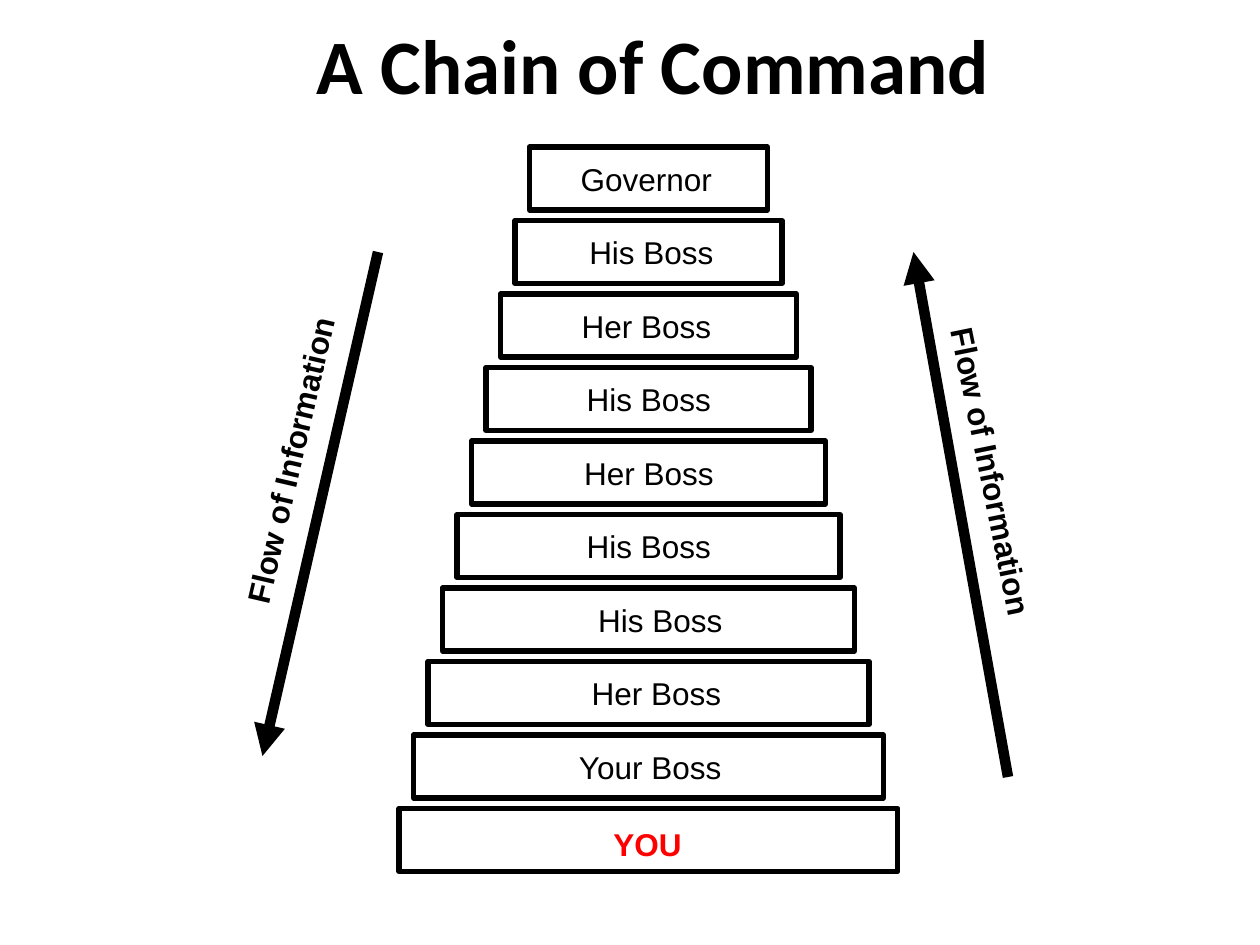
from lxml import etree
from pptx import Presentation
from pptx.dml.color import RGBColor
from pptx.enum.shapes import MSO_CONNECTOR, MSO_SHAPE
from pptx.enum.text import MSO_ANCHOR, PP_ALIGN
from pptx.oxml.ns import qn
from pptx.util import Inches, Pt

RECT = MSO_SHAPE.RECTANGLE
STRAIGHT = MSO_CONNECTOR.STRAIGHT
CENTER = PP_ALIGN.CENTER
MIDDLE = MSO_ANCHOR.MIDDLE

BLACK = RGBColor(0x00, 0x00, 0x00)
RED = RGBColor(0xFF, 0x00, 0x00)

SLIDE_W, SLIDE_H = 10, 7.5
UNIT = SLIDE_W / 120
TEXT_H = 0.4

LEVELS = [
    ("Governor", 1.24, 5.13),
    ("His Boss", 1.2, 5.17),
    ("Her Boss", 1.24, 5.13),
    ("His Boss", 1.2, 5.15),
    ("Her Boss", 1.24, 5.15),
    ("His Boss", 1.2, 5.15),
    ("His Boss", 1.2, 5.24),
    ("Her Boss", 1.24, 5.21),
    ("Your Boss", 1.34, 5.16),
    ("YOU", 0.74, 5.14),
]


def add_text(slide, box, text, size=18, font="Arial", color=BLACK, bold=False, wrap=False):
    sp = slide.shapes.add_textbox(*map(Inches, box))
    tf = sp.text_frame
    tf.word_wrap = wrap
    tf.vertical_anchor = MIDDLE
    p = tf.paragraphs[0]
    p.text = text
    p.alignment = CENTER
    r = p.runs[0]
    r.font.name = font
    r.font.size = Pt(size)
    r.font.bold = bold
    r.font.color.rgb = color
    return sp


def add_title(slide, box):
    add_text(slide, box, "A Chain of Command", 44, "Calibri", bold=True, wrap=True)


def add_pyramid(slide, box):
    left, top, width, height = box
    last = len(LEVELS) - 1
    bar_h = 6 * UNIT
    pitch = (height - bar_h) / last
    step = 0.23
    for i, (label, text_w, text_x) in enumerate(LEVELS):
        bar_w = width - (last - i) * step
        y = top + i * pitch
        bar_box = (left + (width - bar_w) / 2, y, bar_w, bar_h)
        bar = slide.shapes.add_shape(RECT, *map(Inches, bar_box))
        bar.shadow.inherit = False
        bar.fill.background()
        bar.line.color.rgb = BLACK
        bar.line.width = Pt(3)
        is_you = i == last
        text_y = y + (0.08 if is_you else 0.05)
        add_text(slide, (text_x - text_w / 2, text_y, text_w, TEXT_H), label,
                 color=RED if is_you else BLACK, bold=is_you)


def add_flow(slide, start, end, text_center, angle):
    line = slide.shapes.add_connector(STRAIGHT, *map(Inches, start + end))
    line.line.color.rgb = BLACK
    line.line.width = Pt(6)
    ln = line.line._get_or_add_ln()
    etree.SubElement(ln, qn("a:tailEnd"), type="triangle")
    etree.SubElement(line._element.spPr, qn("a:effectLst"))

    text_w = 2.52
    x, y = text_center
    sp = add_text(slide, (x - text_w / 2, y - TEXT_H / 2, text_w, TEXT_H),
                  "Flow of Information", bold=True)
    sp.rotation = angle


def main():
    prs = Presentation()
    prs.slide_width, prs.slide_height = Inches(SLIDE_W), Inches(SLIDE_H)
    slide = prs.slides.add_slide(prs.slide_layouts[6])
    add_title(slide, (0.27, UNIT, 9.83, 0.85))
    add_flow(slide, (3, 2), (25 * UNIT, 6), (2.3, 3.65), 283.1)
    add_flow(slide, (8, 74 * UNIT), (87 * UNIT, 2), (7.87, 3.74), 78.5)
    add_pyramid(slide, (38 * UNIT, 14 * UNIT, 3.96, 69 * UNIT))
    prs.save("out.pptx")


if __name__ == "__main__":
    main()
